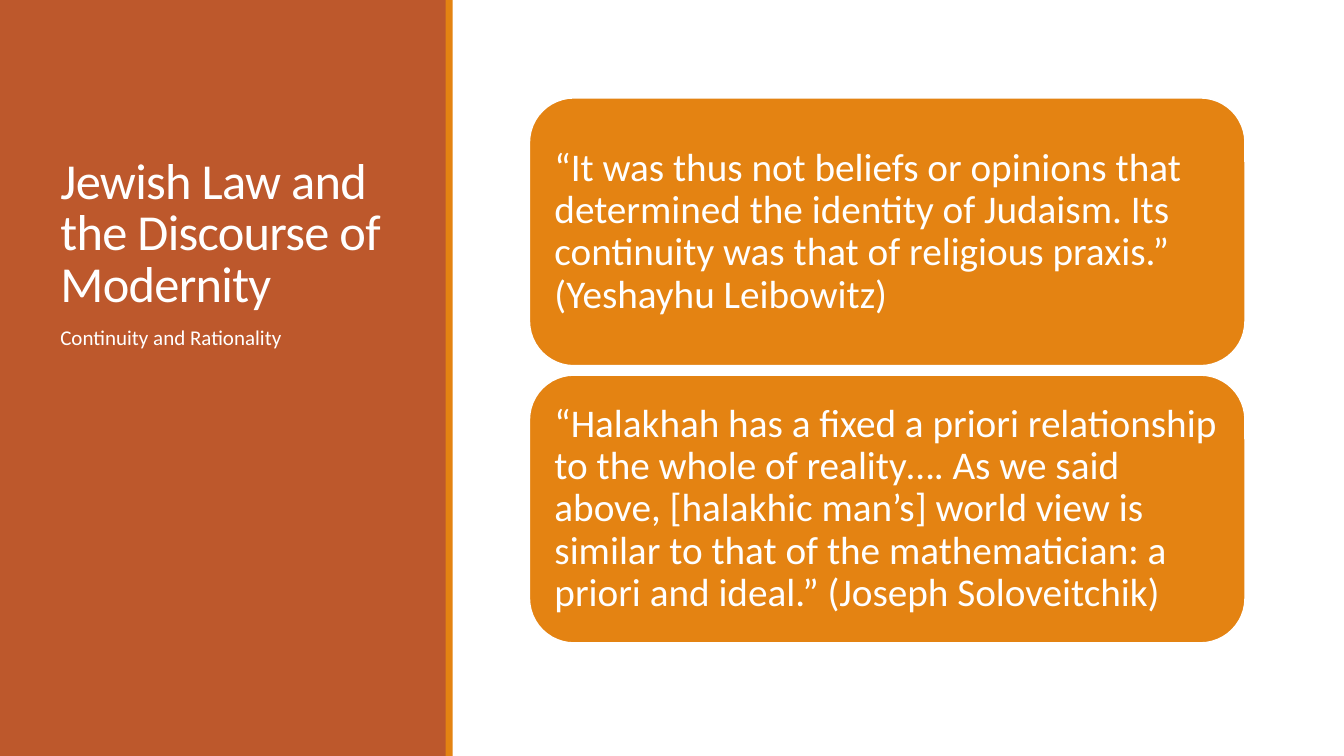
from pptx import Presentation
from pptx.dml.color import RGBColor
from pptx.enum.shapes import MSO_SHAPE as Shape
from pptx.enum.text import MSO_ANCHOR as Anchor, MSO_AUTO_SIZE as AutoSize, PP_ALIGN as Align
from pptx.util import Inches, Pt

RUST = RGBColor(0xBD, 0x58, 0x2C)
ORANGE = RGBColor(0xE4, 0x83, 0x12)
WHITE = RGBColor(0xFF, 0xFF, 0xFF)

QUOTES = [
    "“It was thus not beliefs or opinions that determined the identity of Judaism. "
    "Its continuity was that of religious praxis.” (Yeshayhu Leibowitz)",
    "“Halakhah has a fixed a priori relationship to the whole of reality…. As we said above, "
    "[halakhic man’s] world view is similar to that of the mathematician: a priori and ideal.” "
    "(Joseph Soloveitchik)",
]


class SlideBuilder:
    font = "Calibri"

    def __init__(self, slide):
        self.slide = slide

    def add_text(self, frame, text, size, anchor, spacing=0.9):
        frame.word_wrap = True
        frame.auto_size = AutoSize.NONE
        frame.vertical_anchor = anchor
        paragraph = frame.paragraphs[0]
        paragraph.alignment = Align.LEFT
        paragraph.line_spacing = spacing
        run = paragraph.add_run()
        run.text = text
        run.font.name = self.font
        run.font.size = Pt(size)
        run.font.color.rgb = WHITE
        return run

    def block(self, kind, left, top, width, height, fill):
        block = self.slide.shapes.add_shape(
            kind, Inches(left), Inches(top), Inches(width), Inches(height))
        block.shadow.inherit = False
        block.fill.solid()
        block.fill.fore_color.rgb = fill
        block.line.fill.background()
        return block

    def panel(self, left, width, fill):
        panel = self.block(Shape.RECTANGLE, left, 0, width, 7.5, fill)
        title = self.slide.shapes.title
        title._element.addprevious(panel._element)

    def title(self, text, left, top, width, height):
        title = self.slide.shapes.title
        title.left, title.top = Inches(left), Inches(top)
        title.width, title.height = Inches(width), Inches(height)
        run = self.add_text(title.text_frame, text, 36, Anchor.BOTTOM, 0.85)
        run.font._element.set("spc", "-50")

    def subtitle(self, text, left, top, width, height):
        subtitle = self.slide.shapes.add_textbox(
            Inches(left), Inches(top), Inches(width), Inches(height))
        self.add_text(subtitle.text_frame, text, 15, Anchor.TOP)

    def quote(self, text, left, top, width, height):
        card = self.block(Shape.ROUNDED_RECTANGLE, left, top, width, height, ORANGE)
        card.line.color.rgb = WHITE
        card.line.width = Pt(1.25)
        frame = card.text_frame
        frame.margin_left = frame.margin_right = Inches(0.12)
        frame.margin_top = frame.margin_bottom = Inches(0.12)
        self.add_text(frame, text, 28, Anchor.MIDDLE)


def main():
    deck = Presentation()
    deck.slide_width, deck.slide_height = Inches(13.33), Inches(7.5)
    builder = SlideBuilder(deck.slides.add_slide(deck.slide_layouts[5]))
    builder.panel(0, 4.43, RUST)
    builder.panel(4.42, 0.07, ORANGE)
    builder.title("Jewish Law and the Discourse of Modernity", 0.5, 0.65, 3.5, 2.5)
    builder.subtitle("Continuity and Rationality", 0.5, 3.2, 3.5, 3.7)
    for row, text in enumerate(QUOTES):
        builder.quote(text, 5.25, 0.97 + row * 2.75, 7.1, 2.66)
    deck.save("out.pptx")


if __name__ == "__main__":
    main()
